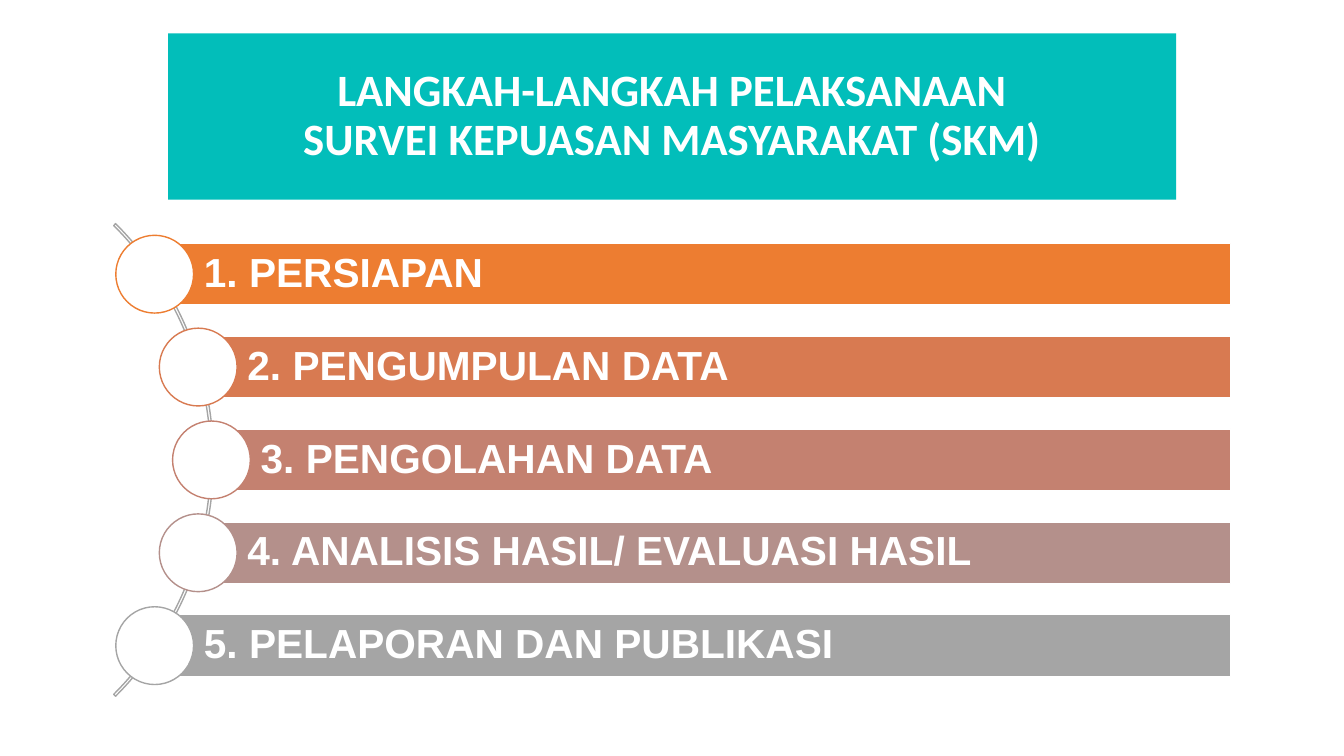
from math import sqrt

from pptx import Presentation
from pptx.dml.color import RGBColor
from pptx.enum.shapes import MSO_SHAPE
from pptx.enum.text import MSO_ANCHOR, MSO_AUTO_SIZE, PP_ALIGN
from pptx.util import Cm, Pt

RECTANGLE, OVAL, BLOCK_ARC = MSO_SHAPE.RECTANGLE, MSO_SHAPE.OVAL, MSO_SHAPE.BLOCK_ARC
MIDDLE, NO_AUTOFIT = MSO_ANCHOR.MIDDLE, MSO_AUTO_SIZE.NONE
LEFT, CENTER = PP_ALIGN.LEFT, PP_ALIGN.CENTER

WHITE = RGBColor(0xFF, 0xFF, 0xFF)
TEAL = RGBColor(0x02, 0xBE, 0xBA)
ORANGE = RGBColor(0xED, 0x7D, 0x31)
COPPER = RGBColor(0xD8, 0x7A, 0x51)
ROSE = RGBColor(0xC4, 0x81, 0x70)
MAUVE = RGBColor(0xB4, 0x90, 0x8B)
GRAY = RGBColor(0xA5, 0xA5, 0xA5)

HEADING = "LANGKAH-LANGKAH PELAKSANAAN\vSURVEI KEPUASAN MASYARAKAT (SKM)"
STEPS = [
    ("1. PERSIAPAN", ORANGE),
    ("2. PENGUMPULAN DATA", COPPER),
    ("3. PENGOLAHAN DATA", ROSE),
    ("4. ANALISIS HASIL/ EVALUASI HASIL", MAUVE),
    ("5. PELAPORAN DAN PUBLIKASI", GRAY),
]

# Geometry in centimetres
ARC_X, ARC_Y, ARC_RADIUS = -3.04, 11.59, 8.42
BEAD_TRACK_RADIUS = 8.37
BEAD_SIZE = 1.96
STEP_PITCH = 2.34
BAR_HEIGHT, BAR_RIGHT = 1.56, 31.01

HEADING_FONT = {"name": "Calibri", "size": Pt(32), "bold": True}
STEP_FONT = {"name": "Arial", "size": Pt(29), "bold": True}
HEADING_FRAME = {"vertical_anchor": MIDDLE, "word_wrap": True, "auto_size": NO_AUTOFIT}
STEP_FRAME = {
    "vertical_anchor": MIDDLE, "word_wrap": True, "margin_left": Cm(1.24),
    "margin_right": Cm(0.2), "margin_top": Cm(0.2), "margin_bottom": Cm(0.2),
}


def apply(target, values):
    for name, value in values.items():
        setattr(target, name, value)


def write(shape, text, frame_format, font_format, alignment):
    frame = shape.text_frame
    frame.text = text
    apply(frame, frame_format)
    paragraph = frame.paragraphs[0]
    apply(paragraph, {"alignment": alignment, "line_spacing": 0.9})
    for run in paragraph.runs:
        apply(run.font, font_format)
        run.font.color.rgb = WHITE


def add_part(slide, preset, left, top, width, height, fill, outline):
    part = slide.shapes.add_shape(preset, Cm(left), Cm(top), Cm(width), Cm(height))
    part.shadow.inherit = False
    part.fill.solid()
    part.fill.fore_color.rgb = fill
    part.line.color.rgb = outline
    part.line.width = Pt(1)
    return part


def add_heading(slide):
    heading = slide.shapes.title
    apply(heading, {"left": Cm(4.24), "top": Cm(0.84), "width": Cm(25.4), "height": Cm(4.19)})
    heading.fill.solid()
    heading.fill.fore_color.rgb = TEAL
    write(heading, HEADING, HEADING_FRAME, HEADING_FONT, CENTER)


def add_arc(slide):
    arc = add_part(slide, BLOCK_ARC, ARC_X - ARC_RADIUS, ARC_Y - ARC_RADIUS,
                   2 * ARC_RADIUS, 2 * ARC_RADIUS, WHITE, GRAY)
    arc.fill.background()
    for index, value in enumerate((189, 27, 0.004)):
        arc.adjustments[index] = value


def add_steps(slide):
    """Centre each bead on the arc and start its bar at the bead's centre."""
    for index, (label, color) in enumerate(STEPS):
        offset = (index - (len(STEPS) - 1) / 2) * STEP_PITCH
        x = ARC_X + sqrt(BEAD_TRACK_RADIUS ** 2 - offset ** 2)
        y = ARC_Y + offset
        bar = add_part(slide, RECTANGLE, x, y - BAR_HEIGHT / 2,
                       BAR_RIGHT - x, BAR_HEIGHT, color, WHITE)
        write(bar, label, STEP_FRAME, STEP_FONT, LEFT)
        add_part(slide, OVAL, x - BEAD_SIZE / 2, y - BEAD_SIZE / 2,
                 BEAD_SIZE, BEAD_SIZE, WHITE, color)


def main():
    deck = Presentation()
    deck.slide_width, deck.slide_height = Cm(33.87), Cm(19.05)
    slide = deck.slides.add_slide(deck.slide_layouts.get_by_name("Title Only"))
    add_heading(slide)
    add_arc(slide)
    add_steps(slide)
    deck.save("out.pptx")


if __name__ == "__main__":
    main()
